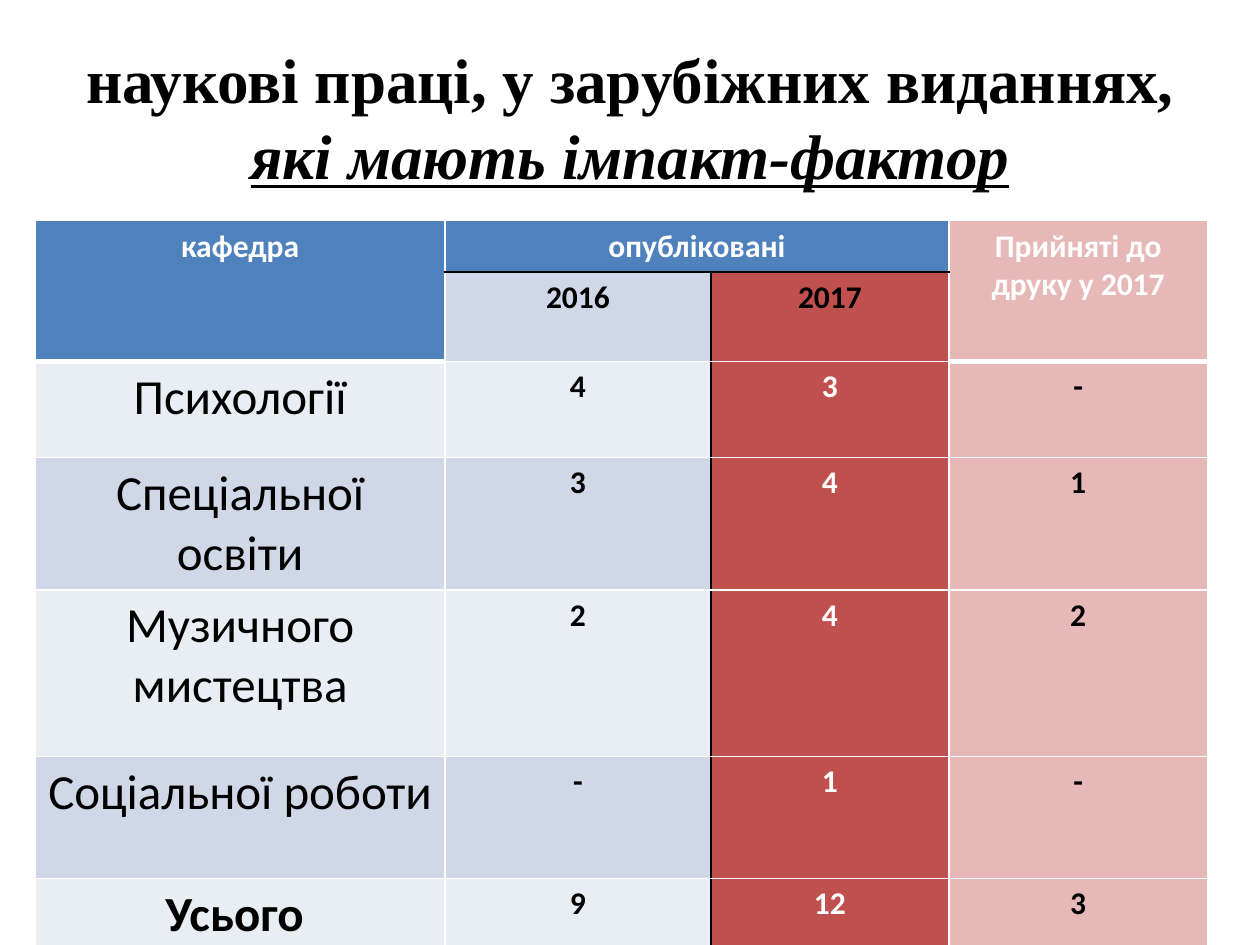
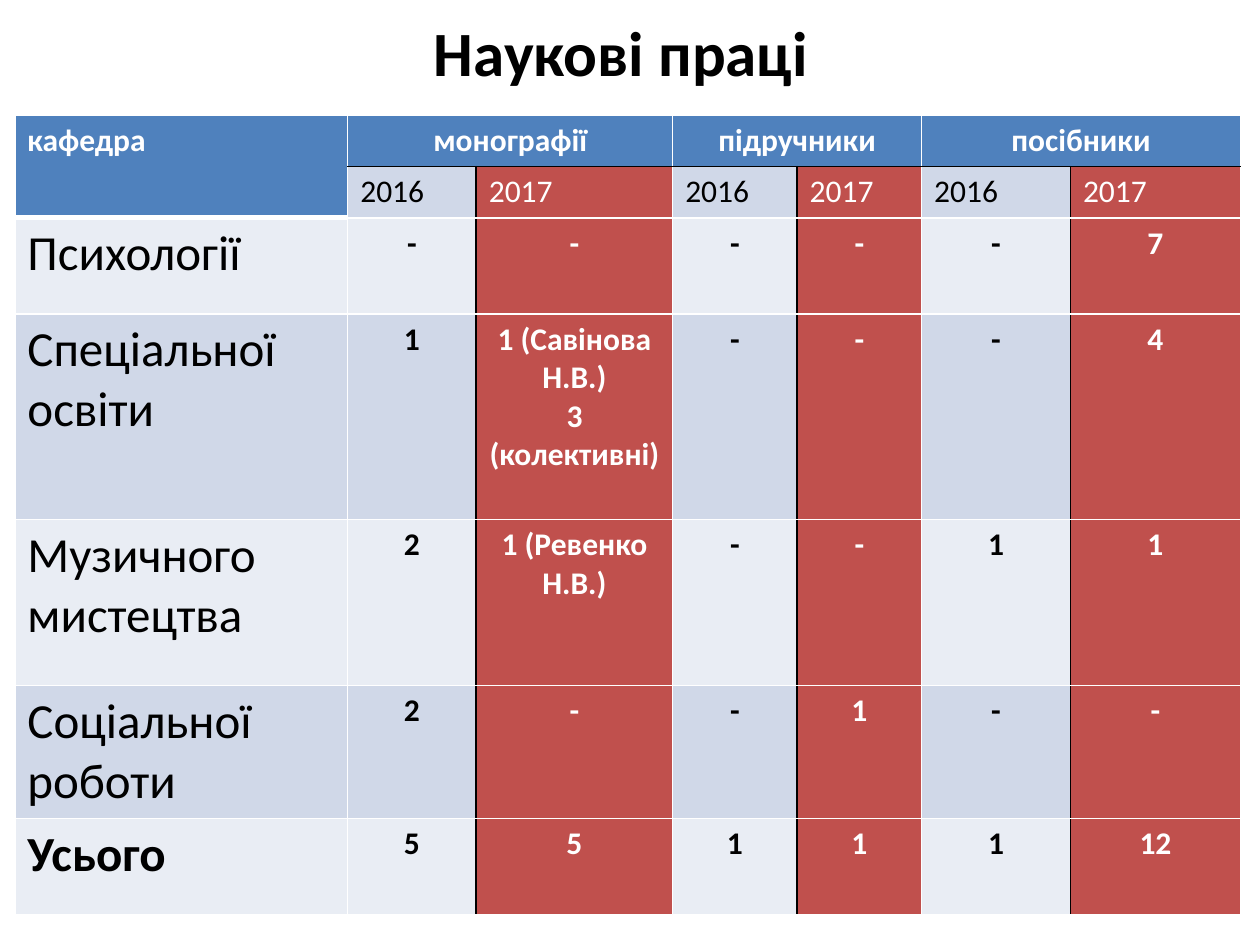
import dataclasses

import pptx
import pptx.dml.color
import pptx.enum.text
import pptx.util
from lxml import etree
from pptx.oxml.ns import qn

Cm = pptx.util.Cm
Pt = pptx.util.Pt
RGB = pptx.dml.color.RGBColor.from_string
ALIGN = pptx.enum.text.PP_ALIGN


@dataclasses.dataclass(frozen=True)
class Theme:
    white: str = "FFFFFF"
    black: str = "000000"
    header: str = "4F81BD"
    current_year: str = "C0504D"
    accepted: str = "E6B9B8"
    bands: tuple = ("E9EDF4", "D0D8E8")
    body_font: str = "Calibri"
    title_size: int = 36
    department_size: int = 28
    value_size: int = 18
    rule: float = 1
    heavy_rule: float = 3


THEME = Theme()


def style_run(run, size, color, bold, font=THEME.body_font):
    run.font.name = font
    run.font.size = Pt(size)
    run.font.color.rgb = RGB(color)
    run.font.bold = bold


def set_borders(cell, sides):
    """Draw cell borders; sides maps L, R, T, B to (colour, points)."""
    properties = cell._tc.get_or_add_tcPr()
    for side in "LRTB":
        color, width = sides[side]
        line = etree.SubElement(properties, qn(f"a:ln{side}"), w=str(Pt(width)))
        fill = etree.SubElement(line, qn("a:solidFill"))
        etree.SubElement(fill, qn("a:srgbClr"), val=color)


# Column roles: "department", "previous" (2016), "current" (2017), "accepted".
# A blank header belongs to the merged cell before or above it.
slides = [
    dict(
        title=["наукові праці, у зарубіжних виданнях, ", "які мають імпакт-фактор"],
        title_font="Times New Roman",
        title_box=(1.27, 0.76, 22.86, 3.18),
        table_at=(0.71, 4.45),
        roles=["department", "previous", "current", "accepted"],
        widths=[8.26, 5.36, 4.8, 5.21],
        heights=[1.02, 1.8, 1.94, 2.67, 3.35, 2.46, 1.36],
        label_align=ALIGN.CENTER,
        bold_years=True,
        rows=[
            ["кафедра", "опубліковані", "", "Прийняті до друку у 2017"],
            ["", "2016", "2017", ""],
            ["Психології", "4", "3", "-"],
            ["Спеціальної освіти", "3", "4", "1"],
            ["Музичного мистецтва", "2", "4", "2"],
            ["Соціальної роботи", "-", "1", "-"],
            ["Усього ", "9", "12", "3"],
        ],
    ),
    dict(
        title=["Наукові праці"],
        title_font=THEME.body_font,
        title_box=(1.09, -0.05, 22.86, 2.16),
        table_at=(0.3, 2.33),
        roles=["department"] + ["previous", "current"] * 3,
        widths=[6.71, 2.59, 3.96, 2.51, 2.51, 3, 3.43],
        heights=[1.02, 1.02, 1.94, 4.14, 3.35, 2.68, 1.94],
        label_align=ALIGN.LEFT,
        bold_years=False,
        rows=[
            ["кафедра", "монографії", "", "підручники", "", "посібники", ""],
            ["", "2016", "2017", "2016", "2017", "2016", "2017"],
            ["Психології", "-", "-", "-", "-", "-", "7"],
            ["Спеціальної освіти", "1", "1 (Савінова Н.В.)\n3 (колективні)",
             "-", "-", "-", "4"],
            ["Музичного мистецтва", "2", "1 (Ревенко Н.В.)", "-", "-", "1", "1"],
            ["Соціальної роботи", "2", "-", "-", "1", "-", "-"],
            ["Усього", "5", "5", "1", "1", "1", "12"],
        ],
    ),
]

presentation = pptx.Presentation()
presentation.slide_width = Cm(25.4)
presentation.slide_height = Cm(19.05)

for content in slides:
    slide = presentation.slides.add_slide(presentation.slide_layouts[5])

    title = slide.shapes.title
    title.left, title.top, title.width, title.height = map(Cm, content["title_box"])
    title_frame = title.text_frame
    title_frame.word_wrap = True
    title_frame.auto_size = pptx.enum.text.MSO_AUTO_SIZE.NONE
    title_frame.vertical_anchor = pptx.enum.text.MSO_ANCHOR.MIDDLE
    heading = title_frame.paragraphs[0]
    heading.alignment = ALIGN.CENTER
    for position, words in enumerate(content["title"]):
        run = heading.add_run()
        run.text = words
        style_run(run, THEME.title_size, THEME.black, True, content["title_font"])
        if position == 1:
            run.font.italic = True
            run.font.underline = True

    rows, roles = content["rows"], content["roles"]
    left, top = map(Cm, content["table_at"])
    works = slide.shapes.add_table(
        len(rows), len(roles), left, top,
        Cm(sum(content["widths"])), Cm(sum(content["heights"])),
    ).table
    works.first_row = works.horz_banding = False
    for column, width in zip(works.columns, content["widths"]):
        column.width = Cm(width)
    for row, height in zip(works.rows, content["heights"]):
        row.height = Cm(height)

    for r, values in enumerate(rows):
        for c, (role, value) in enumerate(zip(roles, values)):
            cell = works.cell(r, c)
            is_year = role in ("previous", "current")
            is_label = role == "department"

            light = (THEME.white, THEME.rule)
            dark = (THEME.black, THEME.rule)
            heavy = (THEME.white, THEME.heavy_rule)
            sides = dict.fromkeys("LRTB", light)
            if r > 0 and role == "current":
                sides["L"] = dark
            if r > 0 and role == "previous":
                sides["R"] = dark
            if is_year and r == 0:
                sides["B"] = dark
            if is_year and r == 1:
                sides["T"] = dark
            if not is_year and r < 2:
                sides["B"] = heavy
            set_borders(cell, sides)

            if role == "accepted":
                fill = THEME.accepted
            elif r == 0 or (is_label and r == 1):
                fill = THEME.header
            elif role == "current":
                fill = THEME.current_year
            else:
                fill = THEME.bands[r % 2]
            cell.fill.solid()
            cell.fill.fore_color.rgb = RGB(fill)

            # The 2017 heading is dark only where the years are bold.
            white_text = r == 0 or role == "current"
            if r == 1 and content["bold_years"]:
                white_text = False
            color = THEME.white if white_text else THEME.black
            is_department = is_label and r > 1
            size = THEME.department_size if is_department else THEME.value_size
            if is_department:
                bold = r == len(rows) - 1
            else:
                bold = r != 1 or content["bold_years"]

            cell.text_frame.text = value
            for paragraph in cell.text_frame.paragraphs:
                paragraph.alignment = (
                    content["label_align"] if is_label or r == 1 else ALIGN.CENTER
                )
                for run in paragraph.runs:
                    style_run(run, size, color, bold)

    for c, role in enumerate(roles):
        if role == "previous":
            works.cell(0, c).merge(works.cell(0, c + 1))
        elif role != "current":
            works.cell(0, c).merge(works.cell(1, c))

presentation.save("out.pptx")
